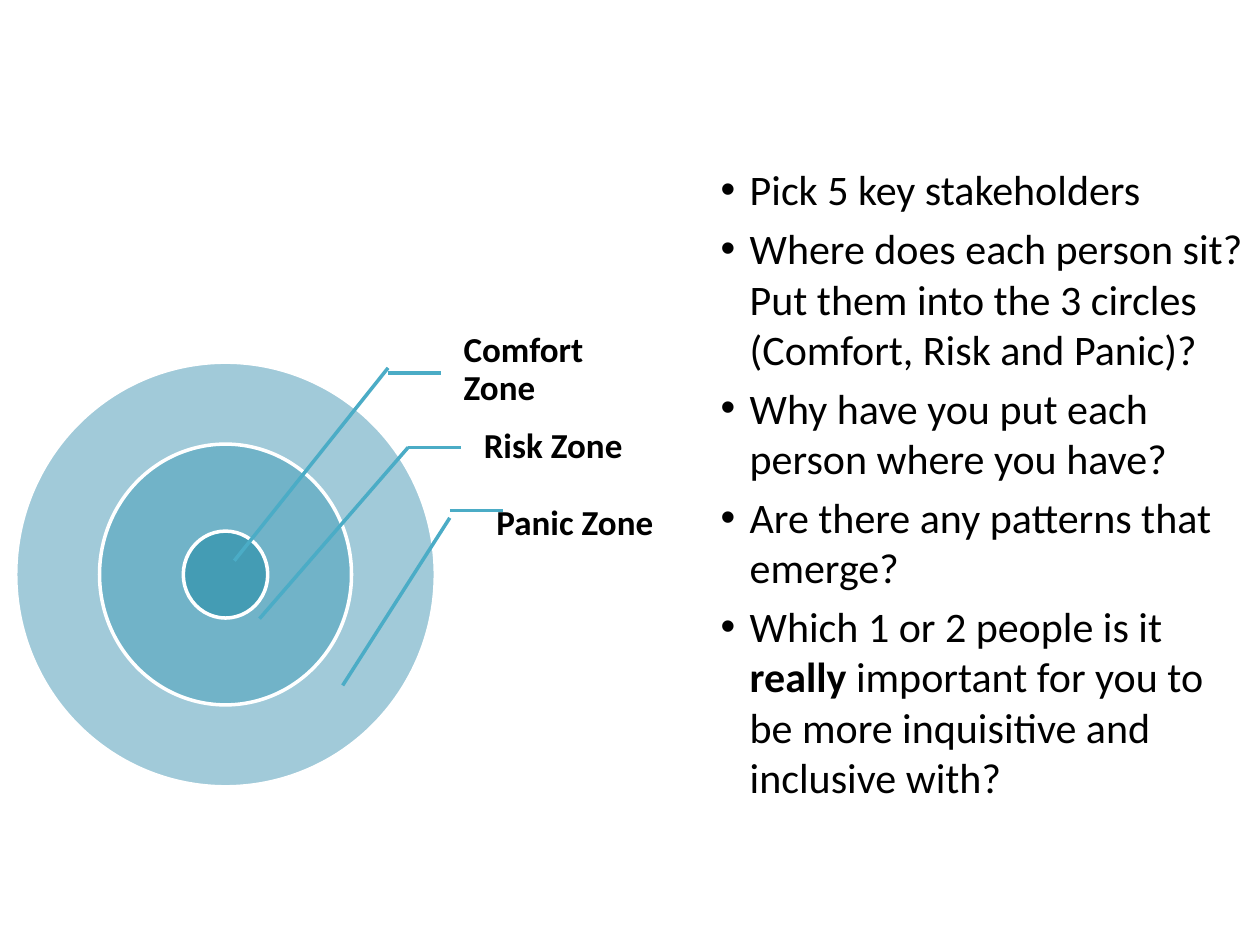
from pptx import Presentation
from pptx.dml.color import RGBColor
from pptx.enum.shapes import MSO_CONNECTOR, MSO_SHAPE
from pptx.enum.text import MSO_ANCHOR, MSO_AUTO_SIZE
from pptx.oxml.ns import qn
from pptx.util import Inches, Pt
from lxml import etree

WHITE = RGBColor(0xFF, 0xFF, 0xFF)
BLACK = RGBColor(0x00, 0x00, 0x00)
PALE = RGBColor(0xA1, 0xCA, 0xD9)
MID = RGBColor(0x71, 0xB3, 0xC8)
DEEP = RGBColor(0x44, 0x9C, 0xB4)
TEAL = RGBColor(0x4B, 0xAC, 0xC6)


def style(item, values):
    for name, value in values.items():
        setattr(item, name, value)


def draw_line(x1, y1, x2, y2):
    line = slide.shapes.add_connector(
        MSO_CONNECTOR.STRAIGHT, Inches(x1), Inches(y1), Inches(x2), Inches(y2))
    line.line.color.rgb = TEAL
    line.line.width = Pt(2)
    etree.SubElement(line._element.spPr, qn("a:effectLst"))


deck = Presentation()
deck.slide_width = Inches(10)
deck.slide_height = Inches(7.5)
slide = deck.slides.add_slide(deck.slide_layouts[1])
title = slide.shapes.title._element
title.getparent().remove(title)

mid_x, mid_y = 1.79, 4.56
for width, height, color in [(3.33, 3.37, PALE), (2, 2.07, MID), (0.67, 0.69, DEEP)]:
    zone = slide.shapes.add_shape(
        MSO_SHAPE.OVAL, Inches(mid_x - width / 2), Inches(mid_y - height / 2),
        Inches(width), Inches(height))
    zone.shadow.inherit = False
    zone.fill.solid()
    zone.fill.fore_color.rgb = color
    zone.line.color.rgb = WHITE
    zone.line.width = Pt(2)

frame_style = {
    "word_wrap": True, "auto_size": MSO_AUTO_SIZE.NONE,
    "vertical_anchor": MSO_ANCHOR.MIDDLE, "margin_left": Inches(0.16),
    "margin_top": Inches(0.03), "margin_right": Inches(0.03),
    "margin_bottom": Inches(0.03)}
label_font = {"name": "Calibri", "size": Pt(20), "bold": True}
labels = [
    ("Comfort Zone", 3.52, 2.71, 0.45, 3.08, 2.96, 2.92, 1.86, 4.45),
    ("Risk Zone", 3.68, 3.32, 0.45, 3.24, 3.55, 3.55, 2.06, 4.91),
    ("Panic Zone", 3.78, 3.9, 0.52, 3.57, 4.05, 4.11, 2.72, 5.44)]
for text, left, top, height, bend, flat, start, end_x, end_y in labels:
    box = slide.shapes.add_textbox(
        Inches(left), Inches(top), Inches(1.67), Inches(height))
    style(box.text_frame, frame_style)
    para = box.text_frame.paragraphs[0]
    para.text = text
    para.line_spacing = 0.9
    style(para.font, label_font)
    para.font.color.rgb = BLACK
    draw_line(bend, flat, bend + 0.42, flat)
    draw_line(bend, start, end_x, end_y)

body = slide.placeholders[1]
style(body, {"left": Inches(5.62), "top": Inches(1.25),
             "width": Inches(4.38), "height": Inches(5.89)})
points = [
    ["Pick 5 key stakeholders"],
    ["Where does each person sit? Put them into the 3 circles (Comfort, Risk and Panic)?"],
    ["Why have you put each person where you have?"],
    ["Are there any patterns that emerge?"],
    ["Which 1 or 2 people is it ", "really ",
     "important for you to be more inquisitive and inclusive with?"]]
frame = body.text_frame
for order, parts in enumerate(points):
    para = frame.paragraphs[0] if order == 0 else frame.add_paragraph()
    para.space_before = Pt(4.8 if order else 0)
    props = para._p.get_or_add_pPr()
    props.set("marL", str(Inches(0.23)))
    props.set("indent", str(-Inches(0.23)))
    etree.SubElement(props, qn("a:buChar")).set("char", "•")
    for part in parts:
        run = para.add_run()
        run.text = part
        style(run.font, {"name": "Calibri", "size": Pt(24), "bold": part == "really "})
        run.font.color.rgb = BLACK

deck.save("out.pptx")
